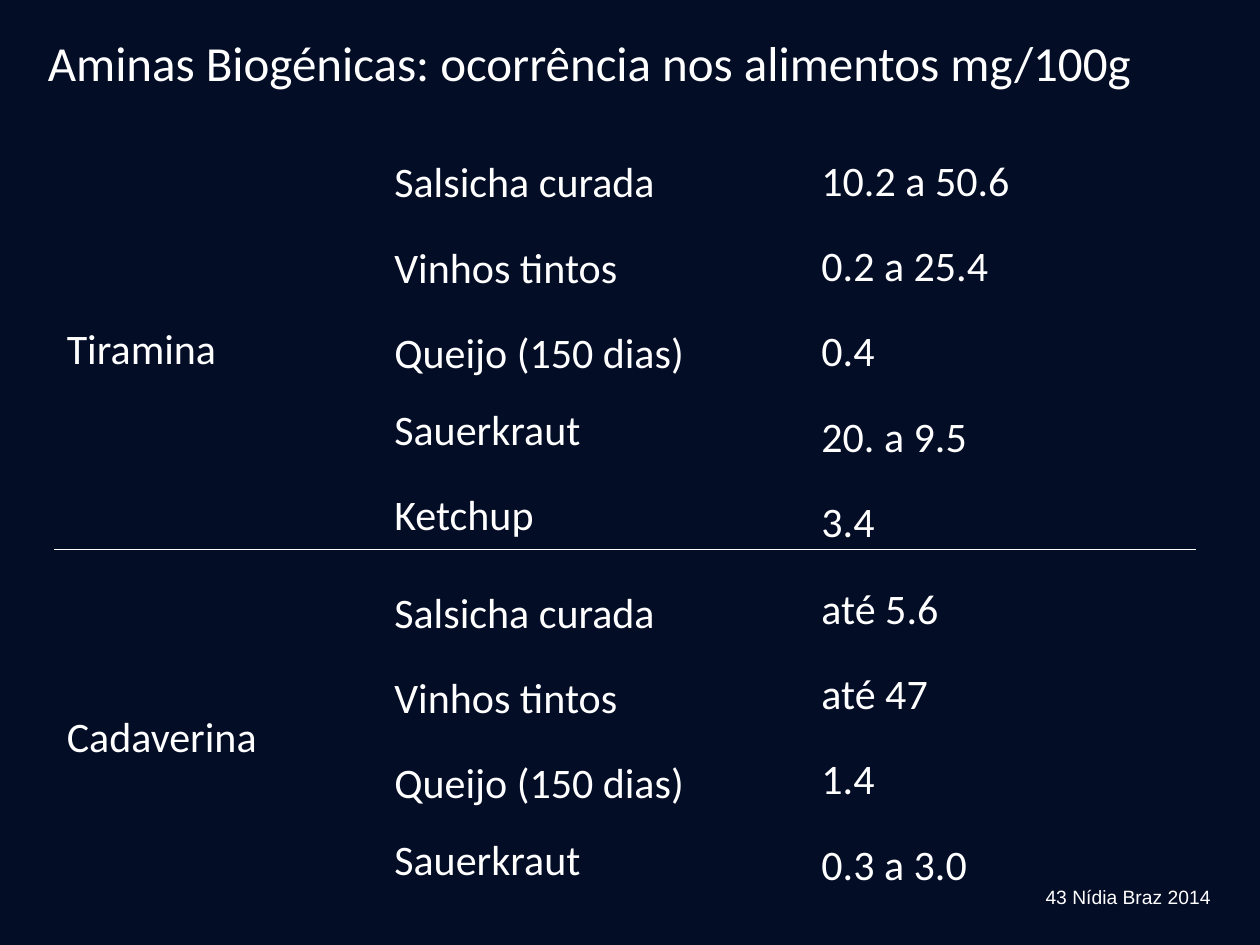
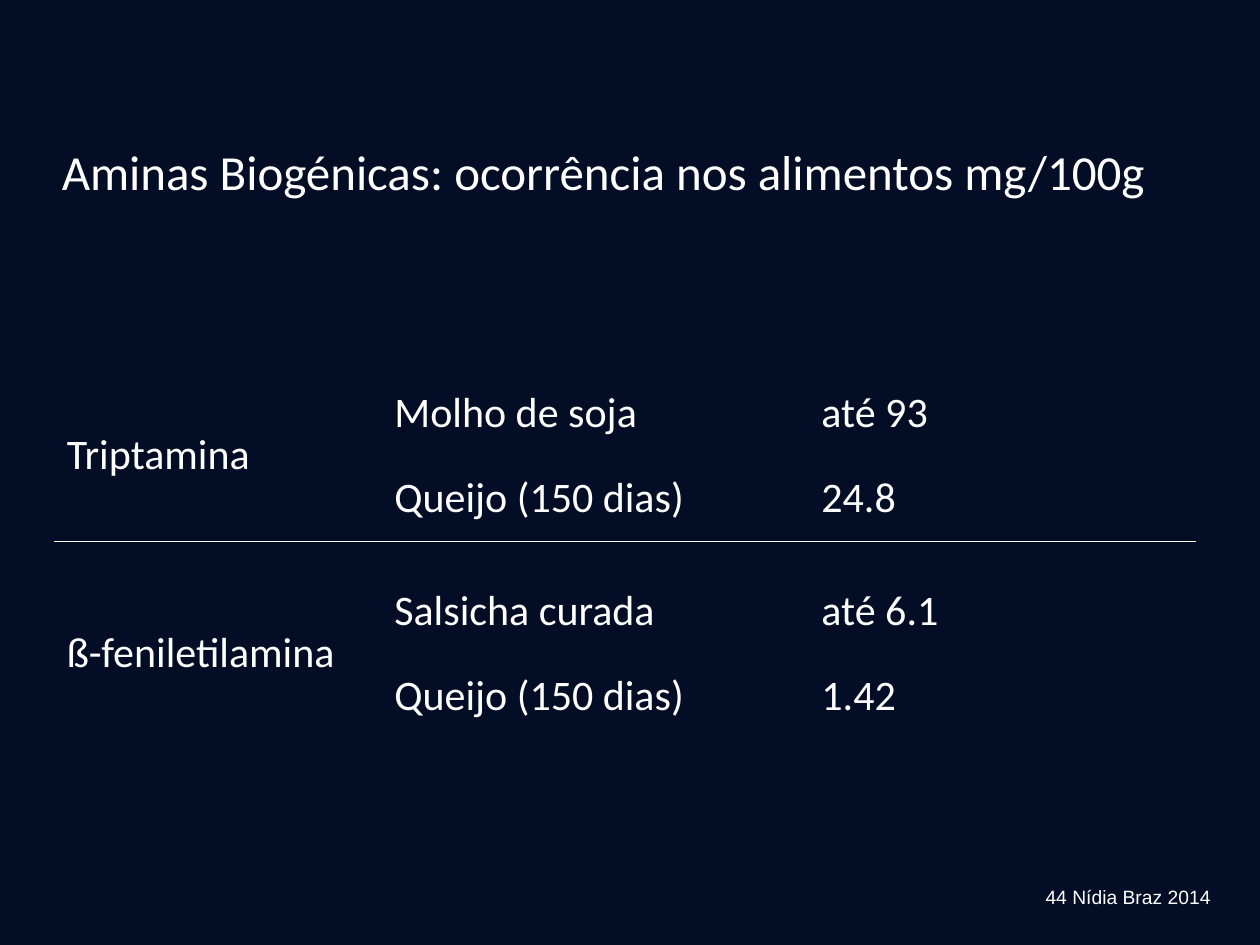
import lxml.etree
import pptx
import pptx.dml.color
import pptx.enum.text
import pptx.oxml.ns
import pptx.util

Inches = pptx.util.Inches
Pt = pptx.util.Pt
NAVY = pptx.dml.color.RGBColor(0x04, 0x0D, 0x26)
WHITE = pptx.dml.color.RGBColor(0xFF, 0xFF, 0xFF)
TITLE = "Aminas Biogénicas: ocorrência nos alimentos mg/100g"
COLUMN_WIDTHS = (2.6, 3.39, 3.07)
TABLE_LEFT = 0.43

SLIDES = [
    {
        "number": 43,
        "title_box": (0.28, 0.21, 9.45, 0.97),
        "table_top": 0.99,
        "row_heights": (3.37, 2.79),
        "amines": [
            (["Tiramina"],
             ["Salsicha curada", "Vinhos tintos", "Queijo (150 dias) Sauerkraut", "Ketchup"],
             ["10.2 a 50.6", "0.2 a 25.4", "0.4", "20. a 9.5", "3.4"]),
            (["Cadaverina"],
             ["Salsicha curada", "Vinhos tintos", "Queijo (150 dias) Sauerkraut"],
             ["até 5.6", "até 47", "1.4", "0.3 a 3.0"]),
        ],
    },
    {
        "number": 44,
        "title_box": (0.39, 1.07, 9.61, 0.97),
        "table_top": 2.73,
        "row_heights": (1.57, 1.57),
        "amines": [
            (["Triptamina"], ["Molho de soja", "Queijo (150 dias)"], ["até 93", "24.8"]),
            (["ß-feniletilamina"], ["Salsicha curada", "Queijo (150 dias)"], ["até 6.1", "1.42"]),
        ],
    },
]


def format_runs(paragraph, font_name, size):
    for run in paragraph.runs:
        run.font.name = font_name
        run.font.size = Pt(size)
        run.font.color.rgb = WHITE


def add_title(slide, box):
    title = slide.shapes.title
    title.left, title.top, title.width, title.height = map(Inches, box)
    frame = title.text_frame
    frame.text = TITLE
    frame.word_wrap = True
    frame.auto_size = pptx.enum.text.MSO_AUTO_SIZE.NONE
    frame.vertical_anchor = pptx.enum.text.MSO_ANCHOR.TOP
    frame.paragraphs[0].alignment = pptx.enum.text.PP_ALIGN.LEFT
    format_runs(frame.paragraphs[0], "Calibri", 28)


def add_footer(slide, number, box):
    frame = slide.shapes.add_textbox(*map(Inches, box)).text_frame
    frame.word_wrap = True
    frame.text = f"{number} Nídia Braz 2014 "
    frame.paragraphs[0].alignment = pptx.enum.text.PP_ALIGN.CENTER
    format_runs(frame.paragraphs[0], "Arial", 11)


def set_borders(cell, ruled_side):
    properties = cell._tc.get_or_add_tcPr()
    qn = pptx.oxml.ns.qn
    for side in ("lnL", "lnR", "lnT", "lnB"):
        line = lxml.etree.SubElement(properties, qn(f"a:{side}"), w=str(Pt(1)))
        if side == ruled_side:
            fill = lxml.etree.SubElement(line, qn("a:solidFill"))
            lxml.etree.SubElement(fill, qn("a:srgbClr"), val=str(WHITE))
        else:
            lxml.etree.SubElement(line, qn("a:noFill"))


def fill_cell(cell, entries, ruled_side):
    set_borders(cell, ruled_side)
    cell.fill.background()
    cell.vertical_anchor = pptx.enum.text.MSO_ANCHOR.MIDDLE
    cell.text_frame.text = "\n".join(entries)
    for paragraph in cell.text_frame.paragraphs:
        paragraph.line_spacing = 1.5
        paragraph.space_before = Pt(4.8)
        format_runs(paragraph, "Calibri", 24)


def add_amine_table(slide, amines, left, top, row_heights):
    table = slide.shapes.add_table(
        len(amines), len(COLUMN_WIDTHS), Inches(left), Inches(top),
        Inches(sum(COLUMN_WIDTHS)), Inches(sum(row_heights))).table
    table.first_row = False
    table.horz_banding = False
    for column, width in zip(table.columns, COLUMN_WIDTHS):
        column.width = Inches(width)
    for index, (row, height, amine) in enumerate(zip(table.rows, row_heights, amines)):
        row.height = Inches(height)
        for cell, entries in zip(row.cells, amine):
            fill_cell(cell, entries, "lnT" if index else "lnB")


def add_amine_slide(presentation, content):
    slide = presentation.slides.add_slide(presentation.slide_layouts[5])
    add_footer(slide, content["number"], (8.15, 6.98, 1.65, 0.29))
    add_title(slide, content["title_box"])
    add_amine_table(slide, content["amines"], TABLE_LEFT,
                    content["table_top"], content["row_heights"])


def main():
    presentation = pptx.Presentation()
    presentation.slide_width = Inches(10)
    presentation.slide_height = Inches(7.5)
    background = presentation.slide_master.background.fill
    background.solid()
    background.fore_color.rgb = NAVY
    for content in SLIDES:
        add_amine_slide(presentation, content)
    presentation.save("out.pptx")


if __name__ == "__main__":
    main()
